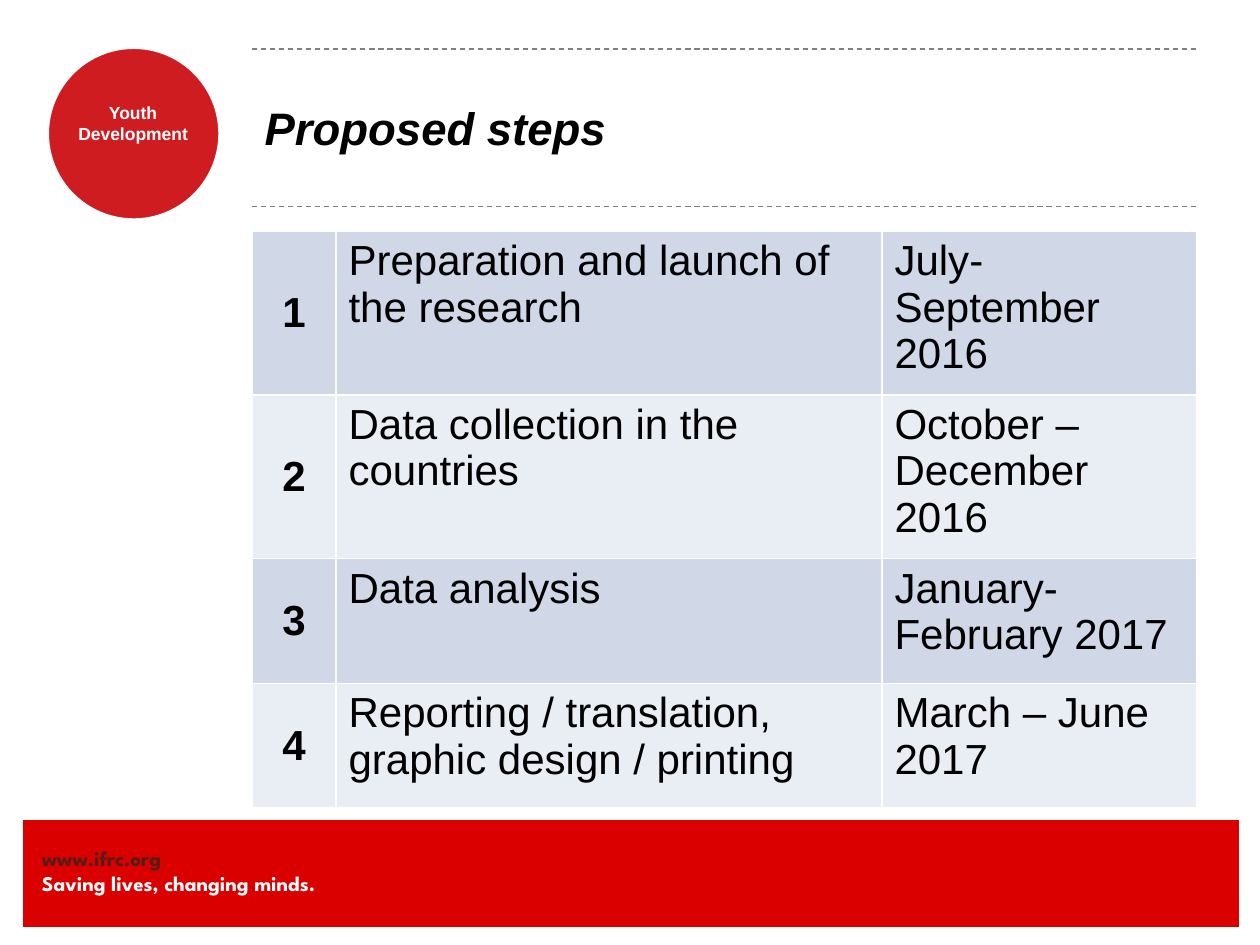
from dataclasses import dataclass

from lxml import etree
from pptx import Presentation
from pptx.dml.color import RGBColor
from pptx.enum import dml, shapes, text
from pptx.oxml.ns import qn
from pptx.util import Pt


@dataclass(frozen=True)
class Theme:
    body_font: str = "Arial"
    brand_font: str = "League Spartan"
    black: str = "000000"
    white: str = "FFFFFF"
    footer: str = "DB0000"
    link: str = "551C15"
    badge: str = "CF1C21"
    rule: str = "808080"
    bands: tuple = ("D0D8E8", "E9EDF4")
    title_size: float = 26
    table_size: float = 24
    footer_size: float = 12
    badge_size: float = 10


class Builder:
    def __init__(self, slide, theme):
        self.slide = slide
        self.theme = theme

    def font(self, p, size, color, name=None, bold=False, italic=False):
        f = p.font
        f.name = name or self.theme.body_font
        f.size = Pt(size)
        f.bold = bold
        f.italic = italic
        f.color.rgb = RGBColor.from_string(color)

    def shape(self, kind, box, fill, line_width):
        sp = self.slide.shapes.add_shape(kind, *map(Pt, box))
        sp.shadow.inherit = False
        sp.fill.solid()
        sp.fill.fore_color.rgb = RGBColor.from_string(fill)
        sp.line.color.rgb = RGBColor.from_string(self.theme.white)
        sp.line.width = Pt(line_width)

    def label(self, box, lines, size, name, align=text.PP_ALIGN.LEFT):
        tf = self.slide.shapes.add_textbox(*map(Pt, box)).text_frame
        tf.word_wrap = True
        tf.margin_left = tf.margin_right = tf.margin_top = tf.margin_bottom = 0
        for i, (content, color) in enumerate(lines):
            p = tf.add_paragraph() if i else tf.paragraphs[0]
            p.text = content
            p.alignment = align
            self.font(p, size, color, name, bold=True)

    def rule(self, left, right, y):
        ln = self.slide.shapes.add_connector(
            shapes.MSO_CONNECTOR.STRAIGHT, Pt(left), Pt(y), Pt(right), Pt(y))
        ln.line.color.rgb = RGBColor.from_string(self.theme.rule)
        ln.line.width = Pt(0.75)
        ln.line.dash_style = dml.MSO_LINE.DASH
        etree.SubElement(ln._element.spPr, qn("a:effectLst"))

    def title(self, box, content):
        sp = self.slide.shapes.title
        sp.left, sp.top, sp.width, sp.height = map(Pt, box)
        tf = sp.text_frame
        tf.text = content
        tf.word_wrap = True
        tf.vertical_anchor = text.MSO_ANCHOR.MIDDLE
        p = tf.paragraphs[0]
        p.alignment = text.PP_ALIGN.LEFT
        self.font(p, self.theme.title_size, self.theme.black, bold=True, italic=True)

    def borders(self, cell):
        pr = cell._tc.get_or_add_tcPr()
        for i, side in enumerate(("lnL", "lnR", "lnT", "lnB")):
            ln = etree.Element(qn(f"a:{side}"), w=str(Pt(1)))
            fill = etree.SubElement(ln, qn("a:solidFill"))
            etree.SubElement(fill, qn("a:srgbClr"), val=self.theme.white)
            pr.insert(i, ln)

    def table(self, left, top, widths, heights, rows):
        tbl = self.slide.shapes.add_table(
            len(rows), len(widths), Pt(left), Pt(top),
            Pt(sum(widths)), Pt(sum(heights))).table
        tbl.first_row = False
        for col, width in zip(tbl.columns, widths):
            col.width = Pt(width)
        for r, (height, row) in enumerate(zip(heights, rows)):
            tbl.rows[r].height = Pt(height)
            for c, content in enumerate((str(r + 1), *row)):
                cell = tbl.cell(r, c)
                cell.text = content
                cell.fill.solid()
                band = self.theme.bands[r % 2]
                cell.fill.fore_color.rgb = RGBColor.from_string(band)
                self.borders(cell)
                p = cell.text_frame.paragraphs[0]
                if c == 0:
                    cell.vertical_anchor = text.MSO_ANCHOR.MIDDLE
                    p.alignment = text.PP_ALIGN.CENTER
                self.font(p, self.theme.table_size, self.theme.black, bold=c == 0)


def main():
    theme = Theme()
    prs = Presentation()
    prs.slide_width, prs.slide_height = Pt(720), Pt(540)
    b = Builder(prs.slides.add_slide(prs.slide_layouts[5]), theme)

    b.shape(shapes.MSO_SHAPE.RECTANGLE, (12.5, 468.25, 696, 62), theme.footer, 0.75)
    b.label((24, 483, 246, 29),
            [("www.ifrc.org", theme.link),
             ("Saving lives, changing minds.", theme.white)],
            theme.footer_size, theme.brand_font)

    b.shape(shapes.MSO_SHAPE.OVAL, (26.75, 26.75, 99.25, 99.25), theme.badge, 2.5)
    b.label((31, 58.3, 90, 24.5), [("Youth Development", theme.white)],
            theme.badge_size, theme.body_font, text.PP_ALIGN.CENTER)

    left, width = 144, 540
    for y in (28, 118):
        b.rule(left, left + width, y)
    b.title((left, 27.5, width, 90), "Proposed steps")

    steps = [
        ("Preparation and launch of the research", "July-September 2016"),
        ("Data collection in the countries", "October – December 2016"),
        ("Data analysis", "January-February 2017"),
        ("Reporting / translation, graphic design / printing", "March – June 2017"),
    ]
    b.table(left, 132, (48, 312, 180), (90.5, 90.5, 71.25, 71.25), steps)
    prs.save("out.pptx")


if __name__ == "__main__":
    main()
